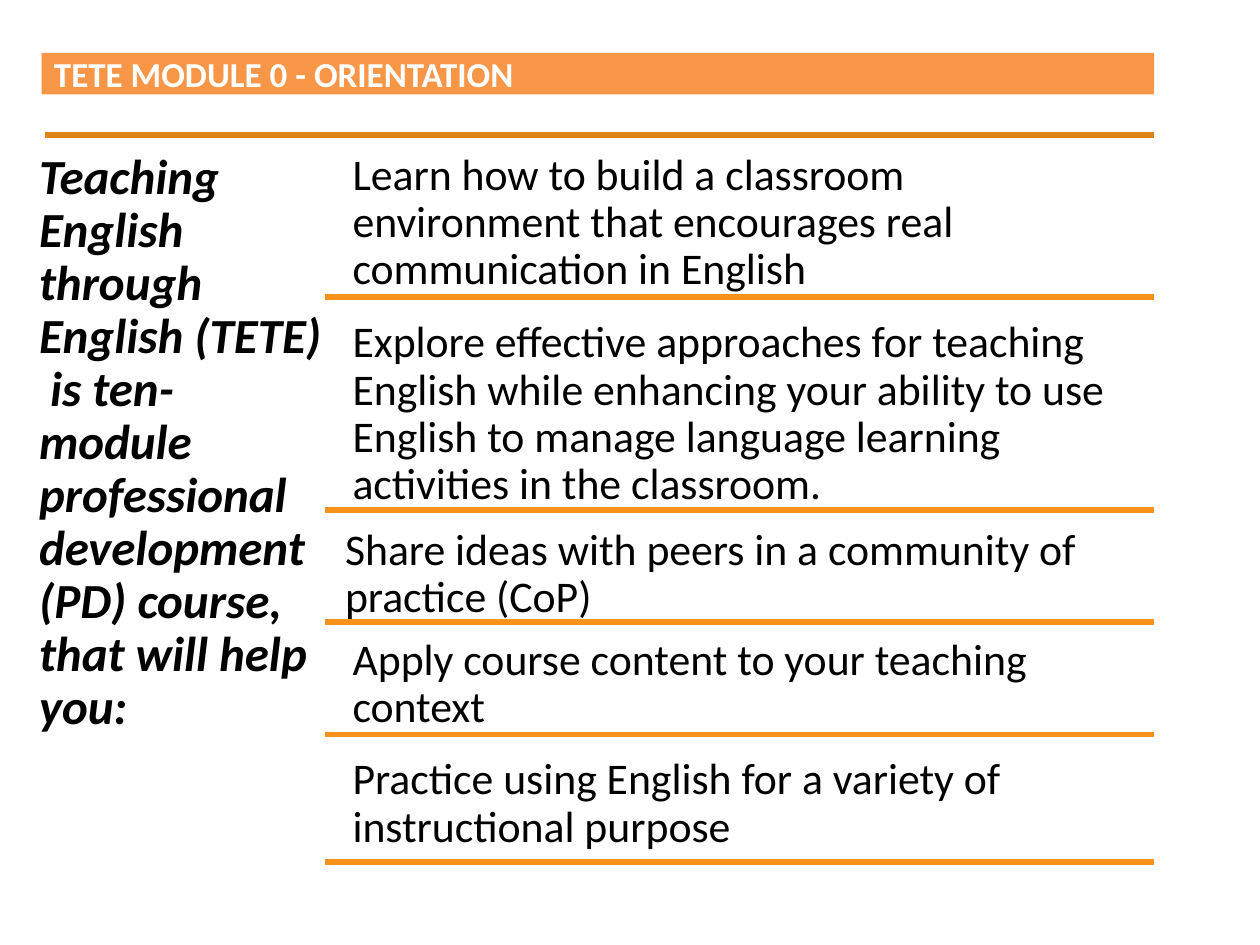
from pptx import Presentation
from pptx.util import Inches, Pt
from pptx.dml.color import RGBColor
from pptx.enum.shapes import MSO_CONNECTOR, MSO_SHAPE
from pptx.enum.text import MSO_ANCHOR, PP_ALIGN
from lxml import etree

LINE, RECT = MSO_CONNECTOR.STRAIGHT, MSO_SHAPE.RECTANGLE
TOP, MID, LEFT = MSO_ANCHOR.TOP, MSO_ANCHOR.MIDDLE, PP_ALIGN.LEFT
BAND = RGBColor(0xF7, 0x96, 0x46)
DARK = RGBColor(0xDF, 0x84, 0x18)
GOLD = RGBColor(0xF7, 0x93, 0x1B)
BLACK = RGBColor(0, 0, 0)
WHITE = RGBColor(255, 255, 255)
DRAW = "{http://schemas.openxmlformats.org/drawingml/2006/main}"

# Column edges, in inches
EDGE, RULE, COL, RIGHT = 0.17, 2.58, 2.7, 9.16
WIDE = RIGHT - COL

deck = Presentation()
deck.slide_width, deck.slide_height = Inches(10), Inches(7.5)
slide = deck.slides.add_slide(deck.slide_layouts[6])


def write(shape, text, side, top, anchor, space, look):
    frame = shape.text_frame
    pads = {"margin_left": side, "margin_right": side,
            "margin_top": top, "margin_bottom": top}
    for name, pad in pads.items():
        setattr(frame, name, Inches(pad))
    frame.word_wrap = True
    frame.vertical_anchor = anchor
    para = frame.paragraphs[0]
    para.alignment, para.line_spacing = LEFT, space
    run = para.add_run()
    run.text = text
    run.font.name = "Calibri"
    run.font.color.rgb = look["color"]
    for name in ("size", "bold", "italic"):
        if name in look:
            setattr(run.font, name, look[name])


def rule(left, y, color):
    line = slide.shapes.add_connector(
        LINE, Inches(left), Inches(y), Inches(RIGHT), Inches(y))
    line.line.color.rgb = color
    line.line.width = Pt(3.35)
    etree.SubElement(line._element.spPr, DRAW + "effectLst")


# Title band
band = slide.shapes.add_shape(
    RECT, Inches(0.33), Inches(0.42), Inches(8.83), Inches(0.33))
band.shadow.inherit = False
band.fill.solid()
band.fill.fore_color.rgb = BAND
band.line.fill.background()
write(band, "TETE MODULE 0 - ORIENTATION", 0.1, 0, MID, 1.0,
      {"size": Pt(20), "bold": True, "color": WHITE})

# Lead text under the top rule
rule(0.36, 1.07, DARK)
lead = slide.shapes.add_textbox(
    Inches(EDGE), Inches(1.07), Inches(2.53), Inches(6.11))
write(lead, "Teaching English through English (TETE)  is ten-module "
      "professional development (PD) course, that will help you:",
      0.14, 0.14, TOP, 0.9,
      {"size": Pt(28), "bold": True, "italic": True, "color": BLACK})

# Goals: left, top, height, y of the rule below, text
goals = [
    (COL, 1.11, 1.28, 2.36, "Learn how to build a classroom environment "
     "that encourages real communication in English"),
    (COL, 2.44, 1.54, 4.05, "Explore effective approaches for teaching "
     "English while enhancing your ability to use English to manage "
     "language learning activities in the classroom."),
    (COL - 0.06, 4.09, 0.84, 4.94,
     "Share ideas with peers in a community of practice (CoP)"),
    (COL, 4.96, 0.74, 5.83, "Apply course content to your teaching context"),
    (COL, 5.91, 0.84, 6.84,
     "Practice using English for a variety of instructional purpose"),
]
for left, top, high, base, text in goals:
    box = slide.shapes.add_textbox(
        Inches(left), Inches(top), Inches(WIDE), Inches(high))
    write(box, text, 0.1, 0.1, TOP, 0.9, {"size": Pt(25), "color": BLACK})
    rule(RULE, base, GOLD)

deck.save("out.pptx")
